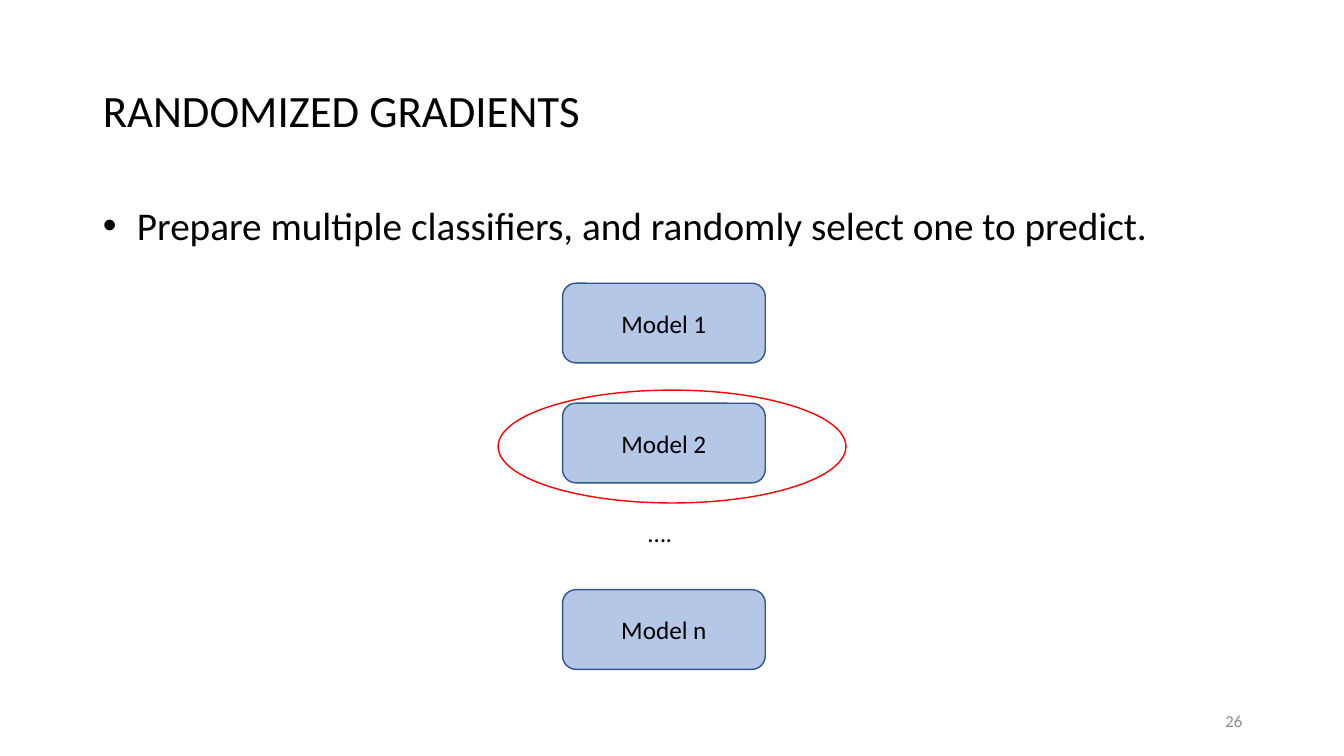
from dataclasses import dataclass

from pptx import Presentation
from pptx.dml.color import RGBColor
from pptx.enum.shapes import MSO_SHAPE as Shape
from pptx.enum.text import MSO_ANCHOR as Anchor, PP_ALIGN as Align
from pptx.util import Inches, Pt


@dataclass(frozen=True)
class Theme:
    font: str = "Calibri"
    text: str = "000000"
    muted: str = "8C8C8C"
    model_fill: str = "B4C7E7"
    model_line: str = "325491"
    highlight: str = "FF0000"
    title_size: int = 32
    body_size: int = 28
    label_size: int = 18
    number_size: int = 12


class SlideBuilder:
    def __init__(self, slide, theme):
        self.slide = slide
        self.theme = theme

    def set_text(self, shape, text, size, color=None, align=Align.LEFT, anchor=Anchor.MIDDLE):
        frame = shape.text_frame
        frame.word_wrap = True
        frame.vertical_anchor = anchor
        paragraph = frame.paragraphs[0]
        paragraph.text = text
        paragraph.alignment = align
        paragraph.font.name = self.theme.font
        paragraph.font.size = Pt(size)
        paragraph.font.color.rgb = RGBColor.from_string(color or self.theme.text)
        return paragraph

    def place(self, shape, box):
        shape.left, shape.top, shape.width, shape.height = map(Inches, box)

    def title(self, text, box):
        shape = self.slide.shapes.title
        self.place(shape, box)
        self.set_text(shape, text, self.theme.title_size).line_spacing = 0.9

    def bullet(self, text, box):
        shape = self.slide.placeholders[1]
        self.place(shape, box)
        paragraph = self.set_text(shape, text, self.theme.body_size, anchor=Anchor.TOP)
        paragraph.line_spacing = 0.9
        paragraph.space_before = Pt(10)
        properties = paragraph._p.get_or_add_pPr()
        properties.set("marL", str(Inches(0.25)))
        properties.set("indent", str(Inches(-0.25)))

    def outline(self, kind, box, line):
        shape = self.slide.shapes.add_shape(kind, *map(Inches, box))
        shape.shadow.inherit = False
        shape.fill.background()
        shape.line.color.rgb = RGBColor.from_string(line)
        shape.line.width = Pt(1)
        return shape

    def model(self, text, box):
        shape = self.outline(Shape.ROUNDED_RECTANGLE, box, self.theme.model_line)
        shape.fill.solid()
        shape.fill.fore_color.rgb = RGBColor.from_string(self.theme.model_fill)
        self.set_text(shape, text, self.theme.label_size, align=Align.CENTER)

    def label(self, text, box, size, **style):
        shape = self.slide.shapes.add_textbox(*map(Inches, box))
        self.set_text(shape, text, size, **style)


def main():
    presentation = Presentation()
    presentation.slide_width = Inches(13.33)
    presentation.slide_height = Inches(7.5)
    theme = Theme()
    builder = SlideBuilder(presentation.slides.add_slide(presentation.slide_layouts[1]), theme)

    # Heading and statement
    builder.title("RANDOMIZED GRADIENTS", (0.92, 0.4, 11.5, 1.45))
    builder.bullet(" Prepare multiple classifiers, and randomly select one to predict.",
                   (0.92, 2, 11.5, 4.76))

    # Stack of models
    for name, top in (("Model 1", 2.81), ("Model 2", 4), ("Model n", 5.85)):
        builder.model(name, (5.58, top, 2.01, 0.79))
    builder.label("….", (6.33, 5.08, 0.51, 0.4), theme.label_size, anchor=Anchor.TOP)

    # Ring around the selected model
    builder.outline(Shape.OVAL, (4.94, 3.87, 3.45, 1.12), theme.highlight)

    # Slide number
    builder.label("26", (9.42, 6.95, 3, 0.4), theme.number_size,
                  color=theme.muted, align=Align.RIGHT)

    presentation.save("out.pptx")


if __name__ == "__main__":
    main()
